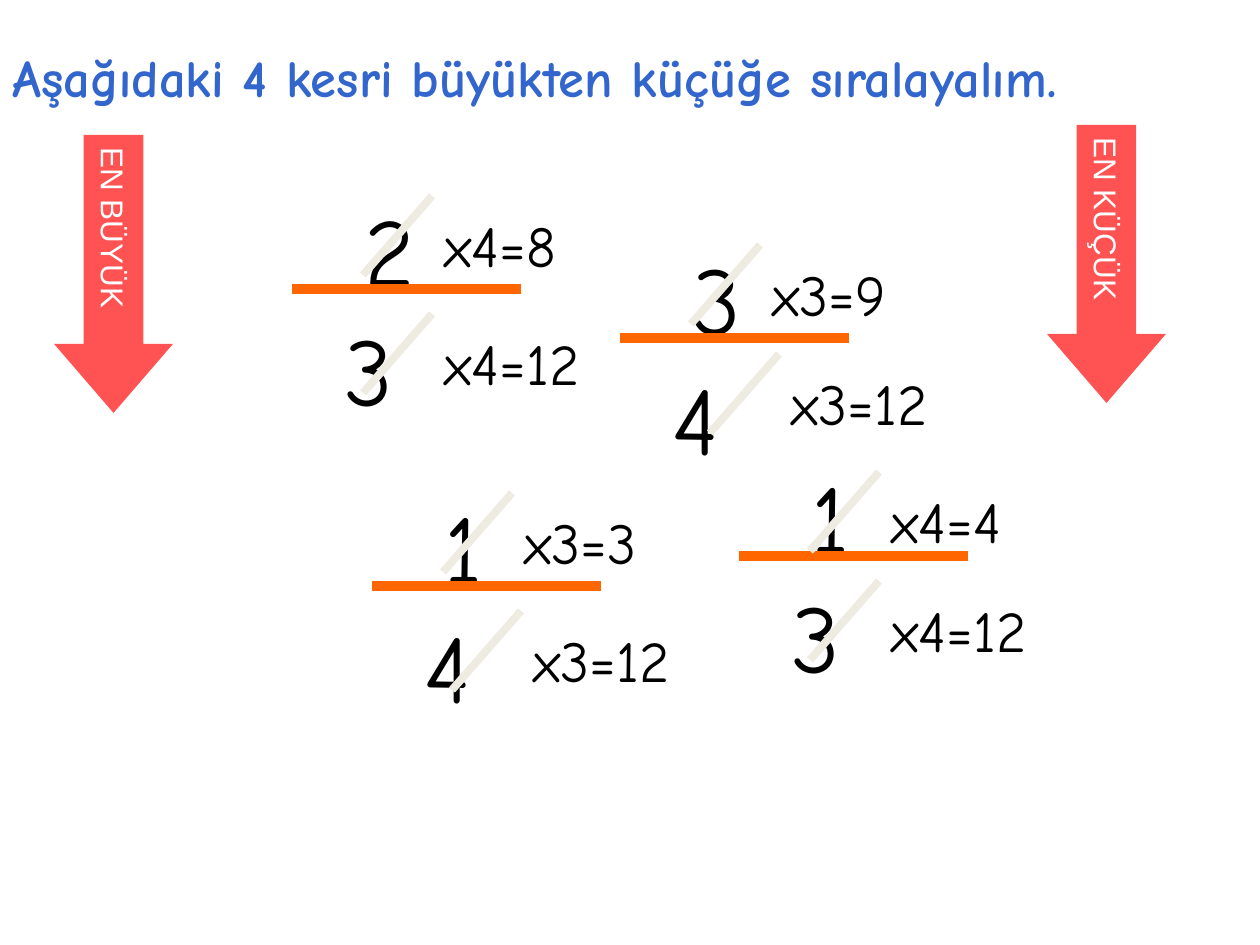
from dataclasses import dataclass

from lxml.etree import SubElement
from pptx import Presentation
from pptx.dml.color import RGBColor
from pptx.enum.shapes import MSO_CONNECTOR, MSO_SHAPE
from pptx.enum.text import MSO_ANCHOR, MSO_AUTO_SIZE, PP_ALIGN
from pptx.oxml.ns import qn
from pptx.util import Emu, Pt


@dataclass(frozen=True)
class Theme:
    hand_font: str = "Comic Neue"
    label_font: str = "Arial"
    ink: str = "000000"
    title: str = "3366CC"
    bar: str = "FF6600"
    strike: str = "EEECE1"
    arrow: str = "FF0000"
    label: str = "FFFFFF"
    arrow_opacity: int = 68000
    title_size: int = 30
    digit_size: int = 55
    factor_size: int = 33
    label_size: int = 18
    bar_width: float = 6
    strike_width: float = 4.5


THEME = Theme()
PX = 914400 / 126


def px(*lengths):
    return [Emu(round(length * PX)) for length in lengths]


def set_all(target, values):
    for name, value in values.items():
        setattr(target, name, value)


def write(para, text, font, size, color, bold=False):
    span = para.add_run()
    span.text = text
    set_all(span.font, {"name": font, "size": Pt(size), "bold": bold})
    span.font.color.rgb = RGBColor.from_string(color)


def add_text(page, box, text, size, color=THEME.ink, bold=False, spacing=1.25):
    frame = page.shapes.add_textbox(*px(*box)).text_frame
    set_all(frame, {"word_wrap": True, "auto_size": MSO_AUTO_SIZE.SHAPE_TO_FIT_TEXT})
    para = frame.paragraphs[0]
    para.line_spacing = spacing
    write(para, text, THEME.hand_font, size, color, bold)


def add_line(page, start, end, color, width):
    line = page.shapes.add_connector(MSO_CONNECTOR.STRAIGHT, *px(*start, *end))
    line.line.color.rgb = RGBColor.from_string(color)
    line.line.width = Pt(width)
    SubElement(line._element.spPr, qn("a:effectLst"))


def add_factor(page, left, top, text):
    """Strike through a digit and write its expansion to the right."""
    add_line(page, (left, top + 10), (left - 69, top + 89), THEME.strike, THEME.strike_width)
    add_text(page, (left, top, 218, 100), text, THEME.factor_size)


def add_fraction(page, left, top, digits, factors, offsets):
    """Place a fraction whose bar starts at left, top; offsets place its factors."""
    numerator, denominator = digits
    add_text(page, (left + 60, top - 134, 89, 158), numerator, THEME.digit_size)
    add_line(page, (left, top), (left + 229, top), THEME.bar, THEME.bar_width)
    add_text(page, (left + 40, top - 14, 129, 158), denominator, THEME.digit_size)
    for factor, (across, down) in zip(factors, offsets):
        add_factor(page, left + across, top + down, factor)


def add_order_arrow(page, box, text):
    arrow = page.shapes.add_shape(MSO_SHAPE.DOWN_ARROW, *px(*box))
    arrow.shadow.inherit = False
    arrow.adjustments[0], arrow.adjustments[1] = 0.5, 0.58
    arrow.fill.solid()
    arrow.fill.fore_color.rgb = RGBColor.from_string(THEME.arrow)
    color = arrow._element.spPr.find(qn("a:solidFill"))[0]
    SubElement(color, qn("a:alpha")).set("val", str(THEME.arrow_opacity))
    arrow.line.fill.background()
    frame = arrow.text_frame
    set_all(frame, {"word_wrap": False, "vertical_anchor": MSO_ANCHOR.MIDDLE})
    arrow._element.txBody.bodyPr.set("vert", "eaVert")
    para = frame.paragraphs[0]
    para.alignment = PP_ALIGN.LEFT
    write(para, text, THEME.label_font, THEME.label_size, THEME.label)


FRACTIONS = [
    (292, 289, "23", ("x4=8", "x4=12"), ((140, -103), (140, 15))),
    (620, 338, "34", ("x3=9", "x3=12"), ((140, -103), (159, 6))),
    (372, 586, "14", ("x3=3", "x3=12"), ((140, -103), (149, 15))),
    (739, 556, "13", ("x4=4", "x4=12"), ((140, -94), (140, 15))),
]


def main():
    deck = Presentation()
    deck.slide_width, deck.slide_height = px(1260, 945)
    page = deck.slides.add_slide(deck.slide_layouts[6])
    add_text(page, (0, 26, 1250, 88), "Aşağıdaki 4 kesri büyükten küçüğe sıralayalım.",
             THEME.title_size, THEME.title, bold=True, spacing=1.2)
    add_order_arrow(page, (54, 135, 119, 278), "EN BÜYÜK")
    add_order_arrow(page, (1047, 125, 119, 278), "EN KÜÇÜK")
    for fraction in FRACTIONS:
        add_fraction(page, *fraction)
    deck.save("out.pptx")


if __name__ == "__main__":
    main()
